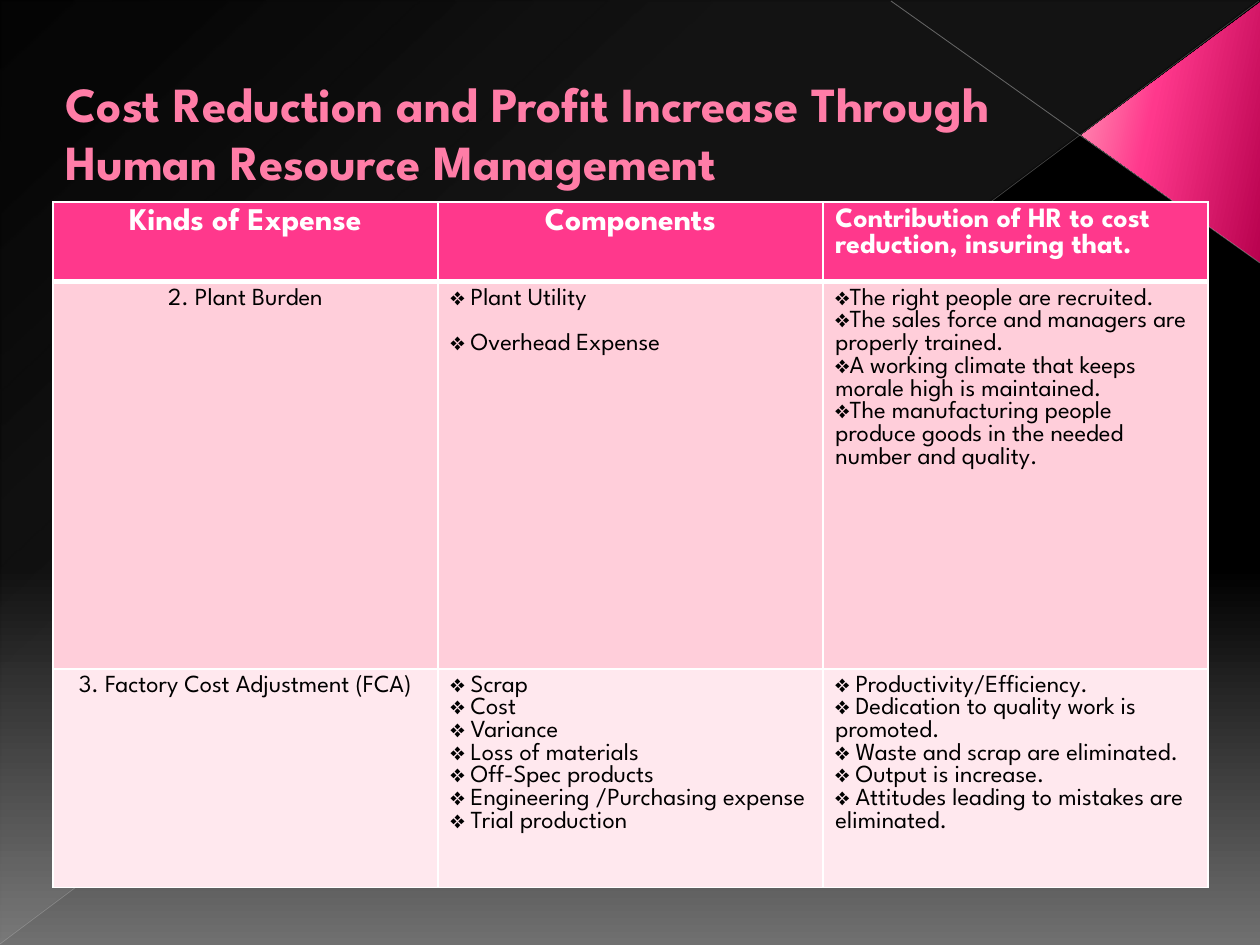
"""Build a slide with a table on cutting cost through human resource management."""
from lxml.etree import SubElement
from pptx import Presentation
from pptx.dml.color import RGBColor
from pptx.enum.shapes import MSO_CONNECTOR, MSO_SHAPE
from pptx.enum.text import MSO_ANCHOR, PP_ALIGN
from pptx.oxml.ns import qn
from pptx.util import Emu, Pt

PX = 914400 // 126
FONT = "League Spartan"
BULLET_FONT = "OpenSymbol"
COLORS = {
    "title": "FF7DA7", "outline": "B12761", "black": "000000", "white": "FFFFFF",
    "header": "FF388C", "band": "FFCEDA", "light": "FFE8EE", "gray": "707070",
    "veil": "D2D2D2", "dark pink": "B8014E", "pale pink": "FF9CB9",
    "short line": "C6C6C6", "long line": "BFBFBF",
}
BACKGROUND = [(0, "black", 100), (60, "black", 100), (100, "gray", 100)]
VEIL = [(0, "veil", 10), (70, "veil", 8), (100, "veil", 1)]
WEDGE = [(0, "dark pink", 100), (60, "header", 100), (100, "pale pink", 100)]
LINES = [
    ((1260, 263), (891, 1), "short line", 0.47, 45),
    ((0, 944), (1259, 1), "long line", 0.39, 35),
]
TITLE = "Cost Reduction and Profit Increase Through Human Resource Management"
HEADERS = [
    ("Kinds of Expense", 18, PP_ALIGN.CENTER),
    ("Components", 18, PP_ALIGN.CENTER),
    ("Contribution of HR to cost reduction, insuring that.", 16, PP_ALIGN.LEFT),
]
EXPENSES = [
    ("2. Plant Burden", "band", 13,
     [" Plant Utility", " Overhead Expense"],
     ["The right people are recruited.",
      "The sales force and managers are properly trained.",
      "A working climate that keeps morale high is maintained.",
      "The manufacturing people produce goods in the needed number and quality."]),
    ("3. Factory Cost Adjustment (FCA)", "light", 0,
     [" Scrap", " Cost", " Variance", " Loss of materials", " Off-Spec products",
      " Engineering /Purchasing expense", " Trial production"],
     [" Productivity/Efficiency.", " Dedication to quality work is promoted.",
      " Waste and scrap are eliminated.", " Output is increase.",
      " Attitudes leading to mistakes are eliminated."]),
]
COLUMN_WIDTH = 385
ROW_HEIGHTS = [74, 387, 200]
TABLE_HEIGHT = 714


def px(*lengths):
    return [Emu(length * PX) for length in lengths]


def color(name):
    return RGBColor.from_string(COLORS[name])


def set_gradient(fill, parent, stops, angle):
    fill.solid()
    solid = parent.find(qn("a:solidFill"))
    gradient = parent.makeelement(qn("a:gradFill"), {"rotWithShape": "1"})
    parent.replace(solid, gradient)
    stop_list = SubElement(gradient, qn("a:gsLst"))
    for position, name, opacity in stops:
        stop = SubElement(stop_list, qn("a:gs"), pos=str(position * 1000))
        tone = SubElement(stop, qn("a:srgbClr"), val=COLORS[name])
        if opacity < 100:
            SubElement(tone, qn("a:alpha"), val=str(opacity * 1000))
    SubElement(gradient, qn("a:lin"), ang=str(angle * 60000), scaled="0")


def add_flipped_shape(slide, kind, box, stops, angle):
    shape = slide.shapes.add_shape(kind, *px(*box))
    shape.shadow.inherit = False
    shape.line.fill.background()
    properties = shape.element.spPr
    properties.find(qn("a:xfrm")).set("flipV", "1")
    set_gradient(shape.fill, properties, stops, angle)
    return shape


def add_line(slide, start, end, name, width, opacity):
    connector = slide.shapes.add_connector(MSO_CONNECTOR.STRAIGHT, *px(*start, *end))
    connector.line.width = Pt(width)
    connector.line.color.rgb = color(name)
    properties = connector.element.spPr
    tone = properties.find(".//" + qn("a:srgbClr"))
    SubElement(tone, qn("a:alpha"), val=str(opacity * 1000))
    SubElement(properties, qn("a:effectLst"))


def add_run(paragraph, text, size, name, bold):
    run = paragraph.add_run()
    run.text = text
    run.font.name = FONT
    run.font.size = Pt(size)
    run.font.bold = bold
    run.font.color.rgb = color(name)
    return run


def add_title(slide):
    box = slide.shapes.add_textbox(*px(53, 38, 998, 188))
    frame = box.text_frame
    frame.word_wrap = True
    frame.vertical_anchor = MSO_ANCHOR.MIDDLE
    run = add_run(frame.paragraphs[0], TITLE, 28, "title", True)
    properties = run.font._element
    outline = properties.makeelement(qn("a:ln"), {"w": str(Pt(0.5))})
    properties.insert(0, outline)
    fill = SubElement(outline, qn("a:solidFill"))
    SubElement(fill, qn("a:srgbClr"), val=COLORS["outline"])


def style_cell(cell, fill_name, top, bottom):
    properties = cell._tc.get_or_add_tcPr()
    for side, width in (("L", 1), ("R", 1), ("T", top), ("B", bottom)):
        border = SubElement(properties, qn("a:ln" + side), w=str(Pt(width)))
        fill = SubElement(border, qn("a:solidFill"))
        SubElement(fill, qn("a:srgbClr"), val=COLORS["white"])
    cell.fill.solid()
    cell.fill.fore_color.rgb = color(fill_name)


def fill_bullets(cell, items, gap):
    frame = cell.text_frame
    for index, item in enumerate(items):
        paragraph = frame.add_paragraph() if index else frame.paragraphs[0]
        if index and gap:
            paragraph.space_before = Pt(gap)
        properties = paragraph._p.get_or_add_pPr()
        SubElement(properties, qn("a:buFont"), typeface=BULLET_FONT)
        SubElement(properties, qn("a:buChar"), char="❖")
        add_run(paragraph, item, 14, "black", False)


def add_expense_table(slide):
    box = px(53, 202, COLUMN_WIDTH * len(HEADERS), sum(ROW_HEIGHTS))
    frame = slide.shapes.add_table(len(ROW_HEIGHTS), len(HEADERS), *box)
    table = frame.table
    for column in table.columns:
        column.width = Emu(COLUMN_WIDTH * PX)
    for row, height in zip(table.rows, ROW_HEIGHTS):
        row.height = Emu(height * PX)
    frame.height = Emu(TABLE_HEIGHT * PX)
    for index, (text, size, alignment) in enumerate(HEADERS):
        cell = table.cell(0, index)
        style_cell(cell, "header", 1, 3)
        paragraph = cell.text_frame.paragraphs[0]
        paragraph.alignment = alignment
        add_run(paragraph, text, size, "white", True)
    for row, (kind, band, gap, components, contributions) in enumerate(EXPENSES, 1):
        for cell in table.rows[row].cells:
            style_cell(cell, band, 3 if row == 1 else 1, 1)
        paragraph = table.cell(row, 0).text_frame.paragraphs[0]
        paragraph.alignment = PP_ALIGN.CENTER
        add_run(paragraph, kind, 14, "black", False)
        fill_bullets(table.cell(row, 1), components, gap)
        fill_bullets(table.cell(row, 2), contributions, 0)


def main():
    presentation = Presentation()
    presentation.slide_width, presentation.slide_height = px(1260, 945)
    slide = presentation.slides.add_slide(presentation.slide_layouts[6])
    background = slide.background.fill
    background.solid()
    set_gradient(background, slide.element.find(".//" + qn("p:bgPr")), BACKGROUND, 90)
    add_flipped_shape(slide, MSO_SHAPE.RIGHT_TRIANGLE, (1, 1, 1258, 943), VEIL, 133)
    wedge = add_flipped_shape(
        slide, MSO_SHAPE.ISOSCELES_TRIANGLE, (1041, 43, 261, 179), WEDGE, 258)
    wedge.rotation = 90
    wedge.adjustments[0] = 0.51
    for line in LINES:
        add_line(slide, *line)
    add_title(slide)
    add_expense_table(slide)
    presentation.save("out.pptx")


if __name__ == "__main__":
    main()
